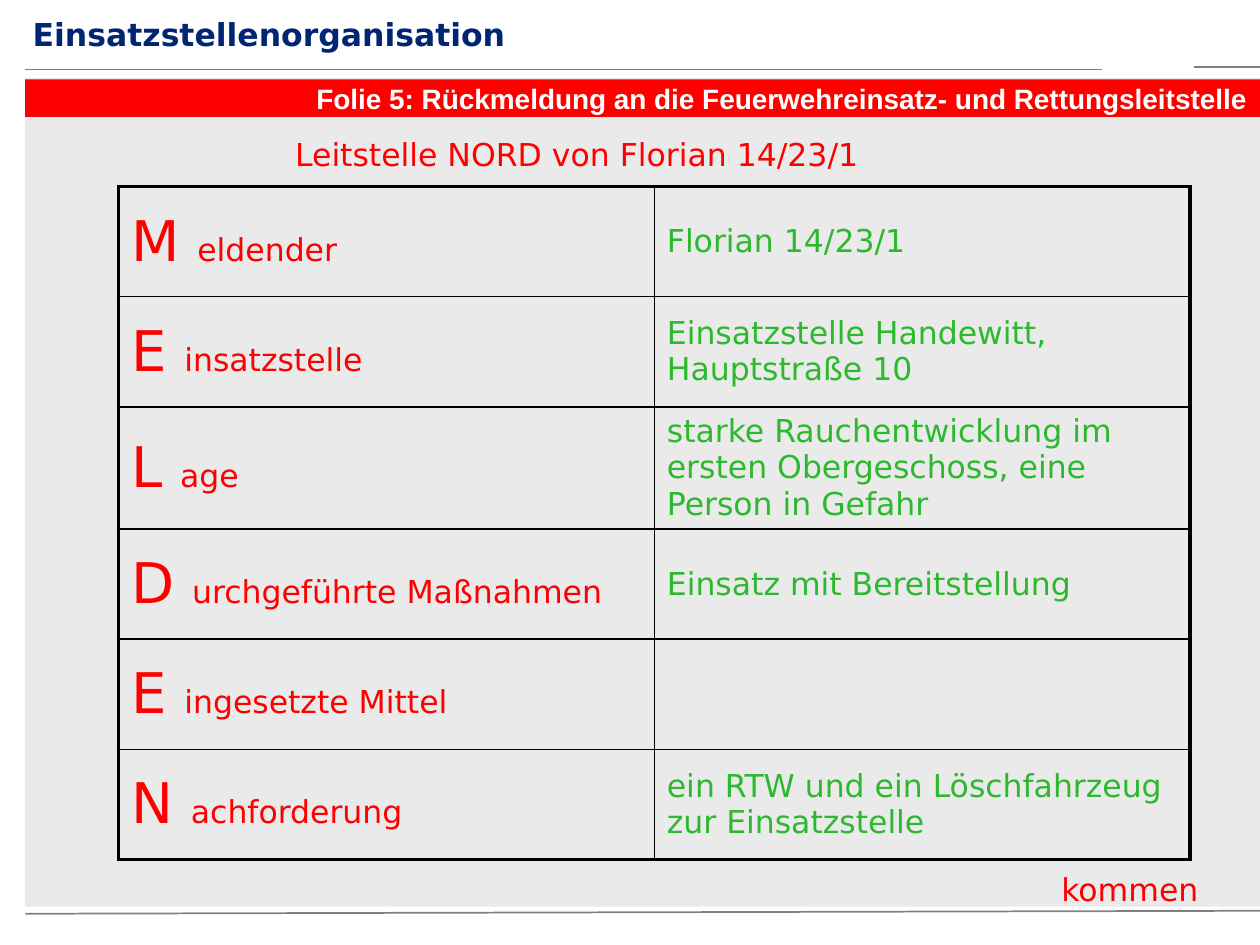
from dataclasses import dataclass

from lxml import etree
from pptx import Presentation
from pptx.dml.color import RGBColor
from pptx.enum.shapes import MSO_CONNECTOR, MSO_SHAPE
from pptx.enum.text import MSO_ANCHOR, PP_ALIGN
from pptx.oxml.ns import qn
from pptx.util import Cm, Pt

RECT = MSO_SHAPE.RECTANGLE
STRAIGHT = MSO_CONNECTOR.STRAIGHT
TOP, MIDDLE = MSO_ANCHOR.TOP, MSO_ANCHOR.MIDDLE
LEFT, CENTER, RIGHT = PP_ALIGN.LEFT, PP_ALIGN.CENTER, PP_ALIGN.RIGHT


@dataclass(frozen=True)
class Theme:
    font: str = "DejaVu Sans"
    band_font: str = "Arial"
    navy: str = "002673"
    red: str = "FF0000"
    green: str = "2DB92D"
    white: str = "FFFFFF"
    panel: str = "EAEAEA"
    rule: str = "808080"
    border: str = "000000"
    body: int = 18
    band: int = 16
    initial: int = 32
    thin: float = 1
    thick: float = 2.25


theme = Theme()


def add_run(p, text, size, color, font=theme.font, bold=False):
    r = p.add_run()
    r.text = text
    r.font.name = font
    r.font.size = Pt(size)
    r.font.bold = bold
    r.font.color.rgb = RGBColor.from_string(color)


def set_border(cell, side, width):
    tcPr = cell._tc.get_or_add_tcPr()
    ln = etree.SubElement(tcPr, qn(f"a:ln{side}"), w=str(Pt(width)))
    fill = etree.SubElement(ln, qn("a:solidFill"))
    etree.SubElement(fill, qn("a:srgbClr"), val=theme.border)


prs = Presentation()
prs.slide_width, prs.slide_height = Cm(25.4), Cm(19.05)
s = prs.slides.add_slide(prs.slide_layouts[5])

title = s.shapes.title
title.left, title.top, title.width, title.height = Cm(0.66), Cm(0.25), Cm(20.96), Cm(1.04)
tf = title.text_frame
tf.margin_left = tf.margin_right = tf.margin_bottom = 0
tf.margin_top = Cm(0.06)
tf.vertical_anchor = TOP
p = tf.paragraphs[0]
p.alignment = LEFT
add_run(p, "Einsatzstellenorganisation", theme.body, theme.navy, bold=True)

bars = []
for top, height, color in [(1.57, 16.71, theme.panel), (1.6, 0.76, theme.red)]:
    sp = s.shapes.add_shape(RECT, Cm(0.51), Cm(top), Cm(24.89), Cm(height))
    sp.shadow.inherit = False
    sp.fill.solid()
    sp.fill.fore_color.rgb = RGBColor.from_string(color)
    sp.line.fill.background()
    bars.append(sp)

tf = bars[1].text_frame
tf.word_wrap = True
tf.vertical_anchor = MIDDLE
p = tf.paragraphs[0]
p.alignment = RIGHT
add_run(p, "Folie 5: Rückmeldung an die Feuerwehreinsatz- und Rettungsleitstelle",
        theme.band, theme.white, theme.band_font, True)

for x1, y1, x2, y2 in [(0.51, 1.4, 22.22, 1.4), (0.51, 18.42, 25.4, 18.36),
                       (24.06, 1.35, 25.4, 1.35)]:
    rule = s.shapes.add_connector(STRAIGHT, Cm(x1), Cm(y1), Cm(x2), Cm(y2))
    rule.line.color.rgb = RGBColor.from_string(theme.rule)
    rule.line.width = Pt(theme.thin)
    etree.SubElement(rule._element.spPr, qn("a:effectLst"))

rows = [
    ("M", "eldender", "Florian 14/23/1"),
    ("E", "insatzstelle", "Einsatzstelle Handewitt, Hauptstraße 10"),
    ("L", "age", "starke Rauchentwicklung im ersten Obergeschoss, eine Person in Gefahr"),
    ("D", "urchgeführte Maßnahmen", "Einsatz mit Bereitstellung"),
    ("E", "ingesetzte Mittel", ""),
    ("N", "achforderung", "ein RTW und ein Löschfahrzeug zur Einsatzstelle"),
]
row_height = Cm(2.22)
table = s.shapes.add_table(len(rows), 2, Cm(2.39), Cm(3.76),
                           Cm(21.6), row_height * len(rows)).table
table.first_row = table.horz_banding = False
for i, (initial, rest, message) in enumerate(rows):
    table.rows[i].height = row_height
    for j in range(2):
        cell = table.cell(i, j)
        cell.vertical_anchor = MIDDLE
        outer = {"L": j == 0, "R": j == 1, "T": i == 0, "B": i == len(rows) - 1}
        for side, is_outer in outer.items():
            set_border(cell, side, theme.thick if is_outer else theme.thin)
        cell.fill.background()
    p = table.cell(i, 0).text_frame.paragraphs[0]
    add_run(p, f"{initial} ", theme.initial, theme.red)
    add_run(p, rest, theme.body, theme.red)
    if message:
        p = table.cell(i, 1).text_frame.paragraphs[0]
        add_run(p, message, theme.body, theme.green)

calls = [
    ("Leitstelle NORD von Florian 14/23/1", 4.37, 2.59, 16.61, CENTER, 2.34),
    ("kommen", 17.81, 17.42, 6.6, RIGHT, 0.25),
]
for text, left, top, width, align, inset in calls:
    tf = s.shapes.add_textbox(Cm(left), Cm(top), Cm(width), Cm(1.02)).text_frame
    tf.word_wrap = True
    tf.margin_right = Cm(inset)
    p = tf.paragraphs[0]
    p.alignment = align
    add_run(p, text, theme.body, theme.red)

prs.save("out.pptx")
